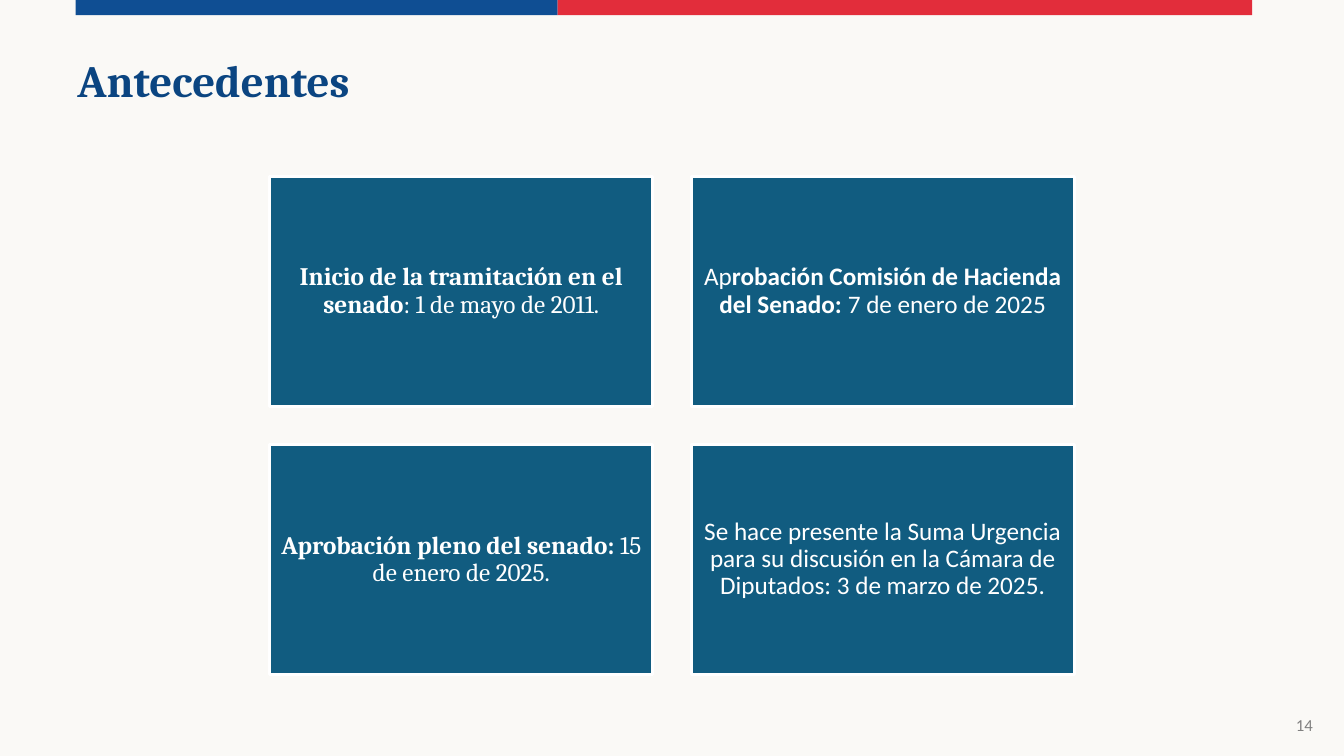
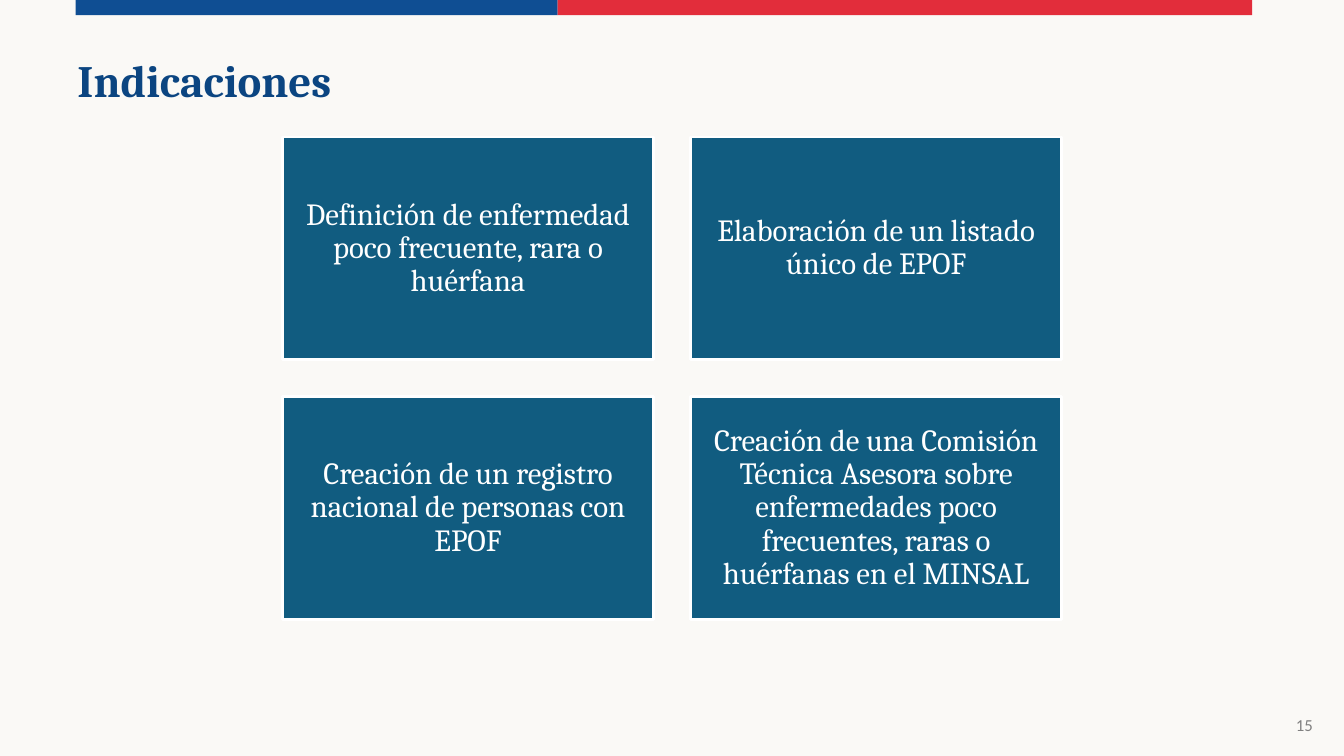
from dataclasses import dataclass

from pptx import Presentation
from pptx.dml.color import RGBColor
from pptx.enum import shapes, text
from pptx.util import Inches, Pt


@dataclass(frozen=True)
class Theme:
    background: str = "FAF9F6"
    blue: str = "0F4E93"
    red: str = "E22D3B"
    title: str = "0B4581"
    card: str = "115C80"
    white: str = "FFFFFF"
    grey: str = "808080"
    serif: str = "Cambria"
    sans: str = "Calibri"
    title_size: int = 32
    number_size: int = 12


THEME = Theme()
SLIDE_W, SLIDE_H = 13.33, 7.5
COLUMNS = 2
CARD_RATIO, GAP_RATIO = 0.6, 0.1


def rgb(value):
    return RGBColor.from_string(value)


def style_run(r, font, size, color, bold=False):
    r.font.name = font
    r.font.size = Pt(size)
    r.font.color.rgb = rgb(color)
    r.font.bold = bold


def add_rect(s, x, y, w, h, fill, line=None):
    sp = s.shapes.add_shape(shapes.MSO_SHAPE.RECTANGLE,
                            Inches(x), Inches(y), Inches(w), Inches(h))
    sp.shadow.inherit = False
    sp.fill.solid()
    sp.fill.fore_color.rgb = rgb(fill)
    if line:
        sp.line.color.rgb = rgb(line)
        sp.line.width = Pt(2)
    else:
        sp.line.fill.background()
    return sp


def add_label(s, x, y, w, h, content, font, size, color,
              bold=False, align=text.PP_ALIGN.LEFT,
              anchor=text.MSO_ANCHOR.TOP):
    tf = s.shapes.add_textbox(Inches(x), Inches(y), Inches(w), Inches(h)).text_frame
    tf.word_wrap = True
    tf.vertical_anchor = anchor
    p = tf.paragraphs[0]
    p.text = content
    p.alignment = align
    style_run(p.runs[0], font, size, color, bold)


def add_card(s, x, y, w, h, font, size, inset, segments):
    tf = add_rect(s, x, y, w, h, THEME.card, THEME.white).text_frame
    tf.word_wrap = True
    tf.vertical_anchor = text.MSO_ANCHOR.MIDDLE
    tf.margin_left = tf.margin_right = Inches(inset)
    tf.margin_top = tf.margin_bottom = Inches(inset)
    p = tf.paragraphs[0]
    p.alignment = text.PP_ALIGN.CENTER
    p.line_spacing = 0.9
    for content, bold in segments:
        r = p.add_run()
        r.text = content
        style_run(r, font, size, THEME.white, bold)


def add_card_grid(s, top, w, size, inset, cards):
    h, gap = w * CARD_RATIO, w * GAP_RATIO
    left = (SLIDE_W - COLUMNS * w - (COLUMNS - 1) * gap) / 2
    for i, (font, segments) in enumerate(cards):
        row, col = divmod(i, COLUMNS)
        add_card(s, left + col * (w + gap), top + row * (h + gap), w, h,
                 font, size, inset, segments)


def add_content_slide(prs, title, number):
    s = prs.slides.add_slide(prs.slide_layouts[6])
    add_rect(s, 0.75, 0, 4.78, 0.15, THEME.blue)
    add_rect(s, 5.53, 0, 6.89, 0.15, THEME.red)
    add_label(s, 0.67, 0.47, 10.88, 0.6, title,
              THEME.serif, THEME.title_size, THEME.title, bold=True)
    add_label(s, 10.01, 7.04, 3.11, 0.31, str(number),
              THEME.sans, THEME.number_size, THEME.grey,
              align=text.PP_ALIGN.RIGHT, anchor=text.MSO_ANCHOR.MIDDLE)
    return s


def main():
    prs = Presentation()
    prs.slide_width, prs.slide_height = Inches(SLIDE_W), Inches(SLIDE_H)
    fill = prs.slide_master.background.fill
    fill.solid()
    fill.fore_color.rgb = rgb(THEME.background)

    milestones = [
        (THEME.serif, [("Inicio de la tramitación en el senado", True),
                       (": 1 de mayo de 2011.", False)]),
        (THEME.sans, [("Ap", False),
                      ("robación Comisión de Hacienda del Senado: ", True),
                      ("7 de enero de 2025", False)]),
        (THEME.serif, [("Aprobación pleno del senado: ", True),
                       ("15 de enero de 2025.", False)]),
        (THEME.sans, [("Se hace presente la Suma Urgencia para su discusión en la "
                       "Cámara de Diputados: 3 de marzo de 2025.", False)]),
    ]
    s = add_content_slide(prs, "Antecedentes", 14)
    add_card_grid(s, 1.75, 3.8, 18, 0.07, milestones)

    measures = [
        "Definición de enfermedad poco frecuente, rara o huérfana",
        "Elaboración de un listado único de EPOF",
        "Creación de un registro nacional de personas con EPOF",
        "Creación de una Comisión Técnica Asesora sobre enfermedades poco "
        "frecuentes, raras o huérfanas en el MINSAL",
    ]
    s = add_content_slide(prs, "Indicaciones", 15)
    add_card_grid(s, 1.36, 3.68, 22, 0.09,
                  [(THEME.serif, [(measure, False)]) for measure in measures])

    prs.save("out.pptx")


if __name__ == "__main__":
    main()
